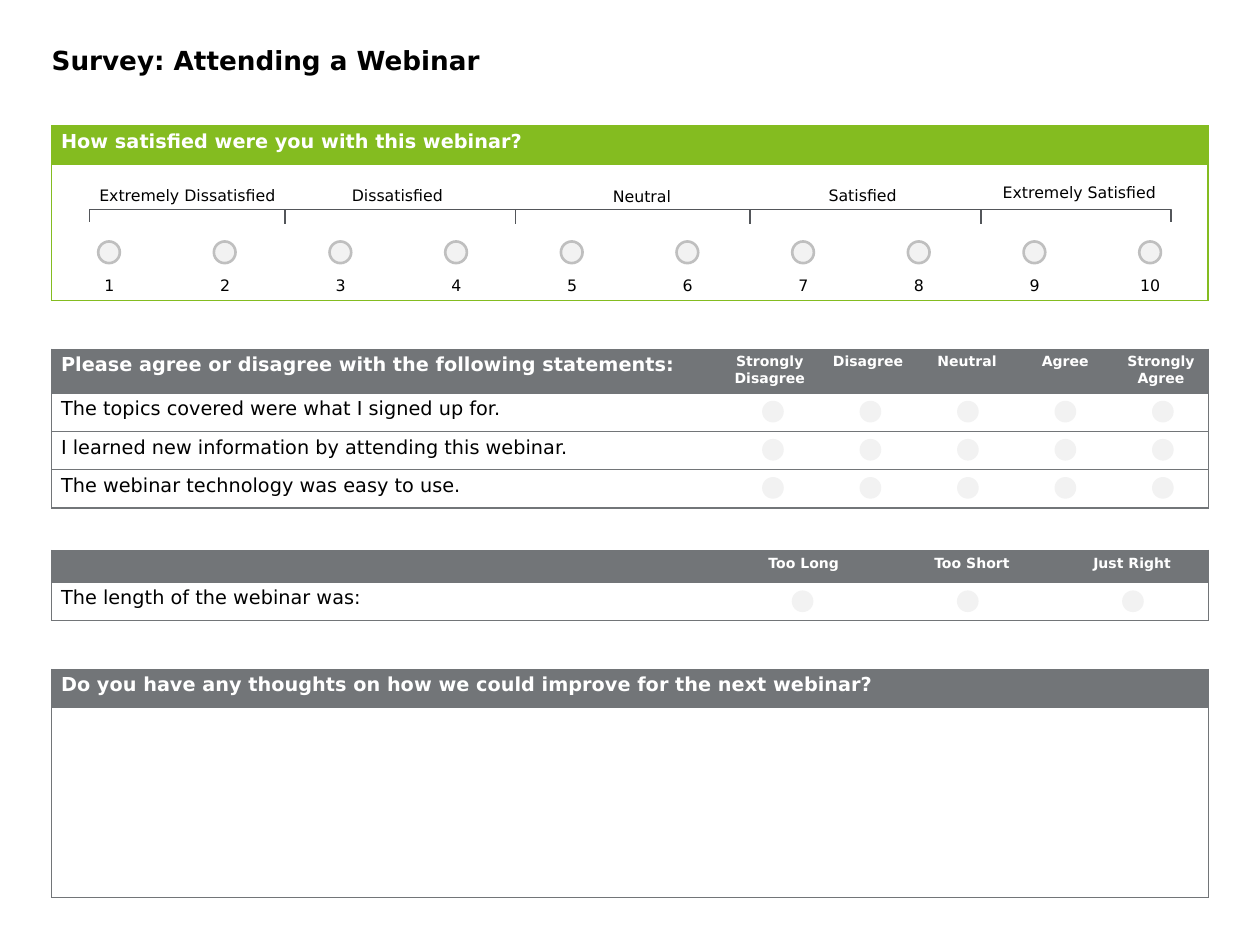
from dataclasses import dataclass
from itertools import product

from lxml.etree import SubElement
from pptx import Presentation
from pptx.dml.color import RGBColor
from pptx.enum.shapes import MSO_CONNECTOR, MSO_SHAPE
from pptx.enum.text import MSO_ANCHOR, MSO_AUTO_SIZE, PP_ALIGN
from pptx.oxml.ns import qn
from pptx.slide import Slide
from pptx.util import Pt

GREEN = RGBColor(0x84, 0xBC, 0x20)
GRAY = RGBColor(0x72, 0x75, 0x78)
DARK = RGBColor(0x53, 0x56, 0x5A)
RING = RGBColor(0xBF, 0xBF, 0xBF)
PALE = RGBColor(0xF2, 0xF2, 0xF2)
WHITE = RGBColor(0xFF, 0xFF, 0xFF)
BLACK = RGBColor(0x00, 0x00, 0x00)

LEFT, WIDTH = 29.5, 661
DOT = 12.4


@dataclass
class SurveySlide:
    """Draws the survey elements on one slide, with lengths in points."""

    slide: Slide
    font_name: str = "DejaVu Sans"
    line_width: float = 0.75

    def style(self, paragraph, size, color=BLACK, bold=False, align=PP_ALIGN.LEFT):
        paragraph.alignment = align
        font = paragraph.font
        font.name, font.size, font.bold = self.font_name, Pt(size), bold
        font.color.rgb = color

    def title(self, text, top, height):
        shape = self.slide.shapes.title
        shape.left, shape.top = Pt(LEFT), Pt(top)
        shape.width, shape.height = Pt(WIDTH), Pt(height)
        frame = shape.text_frame
        frame.text = text
        frame.auto_size = MSO_AUTO_SIZE.NONE
        frame.vertical_anchor = MSO_ANCHOR.TOP
        frame.margin_left = frame.margin_right = frame.margin_top = frame.margin_bottom = 0
        self.style(frame.paragraphs[0], 15, bold=True)

    def borders(self, cell, color, shown):
        properties = cell._tc.get_or_add_tcPr()
        for side in "LRTB":
            line = SubElement(properties, qn(f"a:ln{side}"), w=str(Pt(self.line_width)))
            if side in shown:
                fill = SubElement(line, qn("a:solidFill"))
                SubElement(fill, qn("a:srgbClr"), val=str(color))
            else:
                SubElement(line, qn("a:noFill"))

    def table(self, top, widths, heights, texts, color, body_size=11,
              body_align=PP_ALIGN.LEFT, body_anchor=MSO_ANCHOR.TOP):
        frame = self.slide.shapes.add_table(
            len(heights), len(widths), Pt(LEFT), Pt(top), Pt(WIDTH), Pt(sum(heights)))
        table = frame.table
        table.first_row = table.horz_banding = False
        for column, width in zip(table.columns, widths):
            column.width = Pt(width)
        for row, height in zip(table.rows, heights):
            row.height = Pt(height)
        last = len(widths) - 1
        for i, j in product(range(len(heights)), range(len(widths))):
            cell = table.cell(i, j)
            cell.text = texts[i][j] if j < len(texts[i]) else ""
            cell.margin_left = cell.margin_right = Pt(5.4)
            cell.margin_top = cell.margin_bottom = Pt(2.7)
            paragraph = cell.text_frame.paragraphs[0]
            if i == 0:
                align = PP_ALIGN.CENTER if j else PP_ALIGN.LEFT
                self.style(paragraph, 8 if j else 11, WHITE, True, align)
            else:
                self.style(paragraph, body_size, align=body_align)
                cell.vertical_anchor = body_anchor
            if not cell.text:
                SubElement(paragraph._p, qn("a:endParaRPr"), sz="800")
            single = len(texts[i]) == 1 and i == 0
            self.borders(cell, color, "TB" + "L" * (j == 0) + "R" * (j == last or single))
            if i == 0:
                cell.fill.solid()
                cell.fill.fore_color.rgb = color
            else:
                cell.fill.background()
        if len(texts[0]) == 1 and last:
            table.cell(0, 0).merge(table.cell(0, last))

    def shape(self, kind, left, top, width, height, fill=None, line=None, line_width=0.75):
        shape = self.slide.shapes.add_shape(kind, Pt(left), Pt(top), Pt(width), Pt(height))
        shape.shadow.inherit = False
        if fill is None:
            shape.fill.background()
        else:
            shape.fill.solid()
            shape.fill.fore_color.rgb = fill
        if line is None:
            shape.line.fill.background()
        else:
            shape.line.color.rgb = line
            shape.line.width = Pt(line_width)
        return shape

    def dots(self, left, top, step, count, line=None):
        for i in range(count):
            self.shape(MSO_SHAPE.OVAL, left + i * step, top, DOT, DOT, PALE, line, 1.5)

    def bracket(self, left, top, width, height):
        shape = self.shape(MSO_SHAPE.RIGHT_BRACKET, left + (width - height) / 2,
                           top + (height - width) / 2, height, width, line=DARK)
        shape.adjustments[0] = 0
        shape.rotation = 270

    def tick(self, x, top, bottom):
        line = self.slide.shapes.add_connector(
            MSO_CONNECTOR.STRAIGHT, Pt(x), Pt(top), Pt(x), Pt(bottom))
        line.line.color.rgb = DARK
        line.line.width = Pt(self.line_width)
        SubElement(line._element.spPr, qn("a:effectLst"))

    def label(self, text, left, top, width):
        shape = self.shape(MSO_SHAPE.RECTANGLE, left, top, width, 14.4, WHITE)
        frame = shape.text_frame
        frame.text = text
        frame.word_wrap = True
        frame.vertical_anchor = MSO_ANCHOR.MIDDLE
        frame.margin_left = frame.margin_right = 0
        frame.margin_top = frame.margin_bottom = Pt(7.2)
        paragraph = frame.paragraphs[0]
        paragraph.line_spacing = 1.06
        self.style(paragraph, 9, align=PP_ALIGN.CENTER)


def main():
    presentation = Presentation()
    presentation.slide_width, presentation.slide_height = Pt(720), Pt(540)
    survey = SurveySlide(presentation.slides.add_slide(presentation.slide_layouts[5]))
    survey.title("Survey: Attending a Webinar", 25.2, 23)

    survey.table(199.6, [382.3, 56.2, 56.2, 56.9, 55.4, 54], [25.1, 21.9, 21.9, 21.9], [
        ["Please agree or disagree with the following statements:", "Strongly Disagree",
         "Disagree", "Neutral", "Agree", "Strongly Agree"],
        ["The topics covered were what I signed up for."],
        ["I learned new information by attending this webinar."],
        ["The webinar technology was easy to use."],
    ], GRAY)
    survey.table(382.5, [WIDTH], [21.8, 108.4], [
        ["Do you have any thoughts on how we could improve for the next webinar?"], [""],
    ], GRAY)
    survey.table(314.5, [381.6, 96.4, 95.9, 87.1], [18.3, 21.7], [
        ["", "Too Long", "Too Short", "Just Right"], ["The length of the webinar was:"],
    ], GRAY)
    for row in range(3):
        survey.dots(435.5, 229 + row * 21.8, 55.7, 5)

    survey.table(72, [WIDTH / 10] * 10, [21.9, 77.8], [
        ["How satisfied were you with this webinar?"], [str(n) for n in range(1, 11)],
    ], GREEN, 9, PP_ALIGN.CENTER, MSO_ANCHOR.BOTTOM)
    survey.dots(452.4, 337.4, 94.4, 3)
    survey.dots(56.1, 138, 66.1, 10, RING)

    survey.bracket(51.3, 119.6, 617.8, 7.2)
    for x in (162.8, 294.5, 428.6, 560.6):
        survey.tick(x, 119.6, 128)
    for text, left, top, width in (
        ("Extremely Dissatisfied", 51.2, 104, 111.6),
        ("Dissatisfied", 171.2, 104, 111.6),
        ("Neutral", 311, 104.5, 111.6),
        ("Satisfied", 430.6, 104, 124.6),
        ("Extremely Satisfied", 560.9, 102.2, 111.6),
    ):
        survey.label(text, left, top, width)

    presentation.save("out.pptx")


if __name__ == "__main__":
    main()
